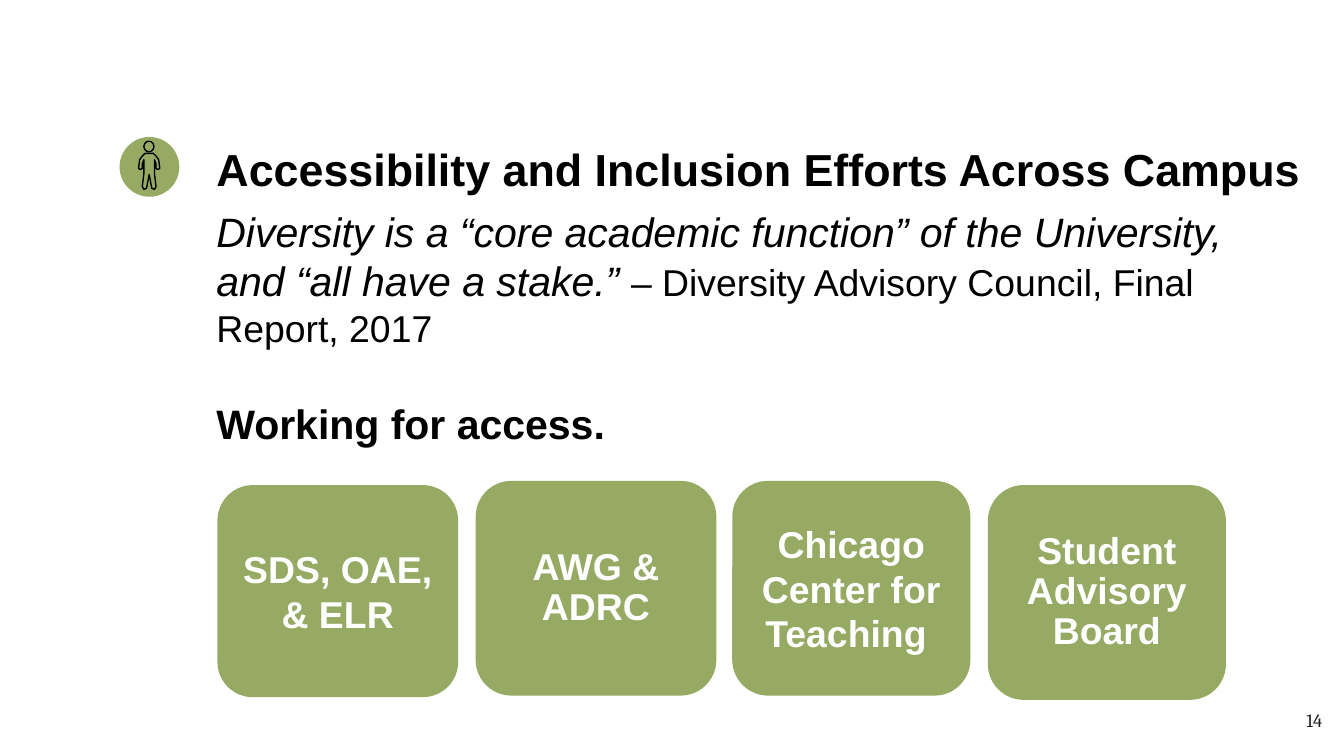
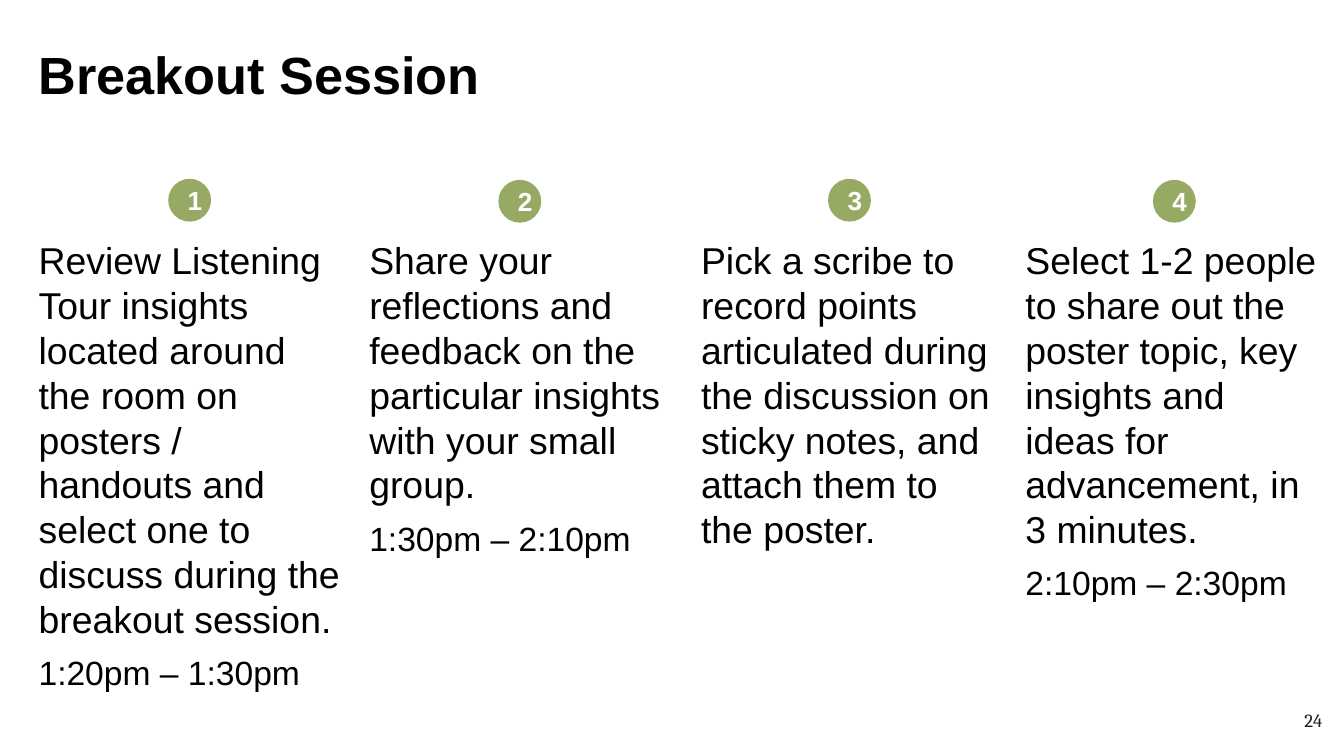
from dataclasses import dataclass

from lxml import etree
from pptx import Presentation
from pptx import util as u
from pptx.dml.color import RGBColor
from pptx.enum import shapes, text

Cm, Pt = u.Cm, u.Pt
LEFT, CENTER, RIGHT = text.PP_ALIGN.LEFT, text.PP_ALIGN.CENTER, text.PP_ALIGN.RIGHT


@dataclass(frozen=True)
class Theme:
    green: RGBColor = RGBColor(0x96, 0xAA, 0x64)
    black: RGBColor = RGBColor(0, 0, 0)
    white: RGBColor = RGBColor(255, 255, 255)
    charcoal: RGBColor = RGBColor(0x1D, 0x1D, 0x1B)
    font: str = "Arial"
    number_font: str = "Cambria"
    headline: int = 28
    long_headline: int = 24
    lead: int = 22
    body: int = 20
    time: int = 18
    badge: int = 14
    number: int = 10


THEME = Theme()


@dataclass(frozen=True)
class Box:
    """A place on the slide, in centimetres."""
    left: float
    top: float
    width: float
    height: float

    def lengths(self) -> tuple:
        return Cm(self.left), Cm(self.top), Cm(self.width), Cm(self.height)


@dataclass(frozen=True)
class Group:
    label: str
    box: Box
    line_spacing: float = 1.0


@dataclass(frozen=True)
class Step:
    task: str
    time: str
    box: Box
    badge_left: float
    badge_top: float


GROUPS = [
    Group("SDS, OAE, & ELR", Box(4.11, 9.17, 4.55, 4.01)),
    Group("AWG & ADRC", Box(8.99, 9.09, 4.55, 4.06), 0.9),
    Group("Chicago Center for Teaching ", Box(13.84, 9.09, 4.5, 4.06)),
    Group("Student Advisory Board", Box(18.67, 9.17, 4.5, 4.06), 0.9),
]

STEPS = [
    Step("Review Listening Tour insights located around the room on posters / "
         "handouts and select one to discuss during the breakout session.",
         "1:20pm – 1:30pm", Box(0.48, 4.24, 6.2, 6.4), 3.18, 3.38),
    Step("Share your reflections and feedback on the particular insights "
         "with your small group.",
         "1:30pm – 2:10pm", Box(6.73, 4.24, 6.25, 3.71), 9.42, 3.4),
    Step("Pick a scribe to record points articulated during the discussion "
         "on sticky notes, and attach them to the poster.",
         "", Box(13, 4.24, 6.1, 7.59), 15.65, 3.38),
    Step("Select 1-2 people to share out the poster topic, key insights and "
         "ideas for advancement, in 3 minutes.",
         "2:10pm – 2:30pm", Box(19.13, 4.24, 6.12, 7.26), 21.79, 3.4),
]

# Right half of the person's body: distance from the axis and height, in 0.1 mm
BODY_AXIS = 282
BODY_HALF = [(0, 290), (8, 290), (13, 295), (18, 302), (20, 318), (18, 320),
             (15, 320), (13, 318), (13, 310), (10, 302), (10, 328), (13, 353),
             (10, 358), (5, 356), (0, 330)]


# Text
def write(frame, content: str, *, size: int, color: RGBColor = THEME.black,
          font: str = THEME.font, bold: bool = False, italic: bool = False,
          align=LEFT, line_spacing: float = 1.0, before: float = 0,
          same_paragraph: bool = False) -> None:
    """Add a run, in a new paragraph unless told otherwise."""
    para = frame.paragraphs[-1]
    if not same_paragraph:
        if para.runs:
            para = frame.add_paragraph()
        para.alignment = align
        para.line_spacing = line_spacing
        para.space_before = Pt(before)
    run = para.add_run()
    run.text = content
    run.font.name, run.font.size = font, Pt(size)
    run.font.bold, run.font.italic = bold, italic
    run.font.color.rgb = color


def pad(frame, margin: float = 0.25) -> None:
    frame.margin_left = frame.margin_right = Cm(margin)
    frame.margin_top = frame.margin_bottom = Cm(margin)


def add_text_box(slide, box: Box):
    frame = slide.shapes.add_textbox(*box.lengths()).text_frame
    frame.word_wrap = True
    return frame


# Shapes
def add_green(slide, kind, box: Box):
    shape = slide.shapes.add_shape(kind, *box.lengths())
    shape.shadow.inherit = False
    shape.fill.solid()
    shape.fill.fore_color.rgb = THEME.green
    shape.line.fill.background()
    return shape


def outline(shape) -> None:
    shape.shadow.inherit = False
    shape.fill.background()
    shape.line.color.rgb = THEME.black
    shape.line.width = Pt(0.75)


def add_person(slide) -> None:
    add_green(slide, shapes.MSO_SHAPE.OVAL, Box(2.26, 2.59, 1.13, 1.13))
    mirrored = [(-x, y) for x, y in reversed(BODY_HALF[1:-1])]
    points = [(BODY_AXIS + x, y) for x, y in BODY_HALF + mirrored]
    builder = slide.shapes.build_freeform(*points[0], scale=Cm(0.01))
    builder.add_line_segments(points[1:], close=True)
    outline(builder.convert_to_shape())
    head = Box(2.72, 2.67, 0.19, 0.2)
    outline(slide.shapes.add_shape(shapes.MSO_SHAPE.OVAL, *head.lengths()))


# Slide frame: title and page number
def add_slide(prs, title: str, box: Box, size: int, number: int):
    slide = prs.slides.add_slide(prs.slide_layouts[5])
    heading = slide.shapes.title
    heading.left, heading.top, heading.width, heading.height = box.lengths()
    frame = heading.text_frame
    frame.word_wrap = True
    frame.auto_size = text.MSO_AUTO_SIZE.NONE
    frame.vertical_anchor = text.MSO_ANCHOR.MIDDLE
    pad(frame)
    write(frame, title, size=size, bold=True)

    footer = add_text_box(slide, Box(23.72, 13.18, 1.52, 1.09))
    pad(footer)
    write(footer, str(number), size=THEME.number, font=THEME.number_font,
          color=THEME.charcoal, align=RIGHT)
    return slide


def build_efforts(prs) -> None:
    slide = add_slide(prs, "Accessibility and Inclusion Efforts Across Campus",
                      Box(3.84, 2.57, 21.13, 1.22), THEME.long_headline, 14)
    add_person(slide)

    # Quotation and lead-in
    quote = add_text_box(slide, Box(3.84, 3.78, 19.53, 4.95))
    write(quote, "Diversity is a “core academic function” of the University, "
          "and “all have a stake.” ", size=THEME.lead, italic=True)
    write(quote, "– Diversity Advisory Council, Final Report, 2017",
          size=THEME.body, same_paragraph=True)
    write(quote, "Working for access.", size=THEME.lead, bold=True, before=26)

    # Groups at work
    for group in GROUPS:
        tile = add_green(slide, shapes.MSO_SHAPE.ROUNDED_RECTANGLE, group.box)
        write(tile.text_frame, group.label, size=THEME.body, color=THEME.white,
              bold=True, align=CENTER, line_spacing=group.line_spacing)


def build_breakout(prs) -> None:
    slide = add_slide(prs, "Breakout Session", Box(0.48, 0.79, 9.17, 1.22),
                      THEME.headline, 24)
    for number, step in enumerate(STEPS, start=1):
        column = add_text_box(slide, step.box)
        pad(column)
        write(column, step.task, size=THEME.body, before=6)
        if step.time:
            write(column, step.time, size=THEME.time, before=6)
        badge = add_green(slide, shapes.MSO_SHAPE.OVAL,
                          Box(step.badge_left, step.badge_top, 0.81, 0.81))
        write(badge.text_frame, str(number), size=THEME.badge,
              color=THEME.white, bold=True, align=CENTER)


def main() -> None:
    prs = Presentation()
    prs.slide_width, prs.slide_height = Cm(25.4), Cm(14.29)
    build_efforts(prs)
    build_breakout(prs)
    prs.save("out.pptx")


if __name__ == "__main__":
    main()
